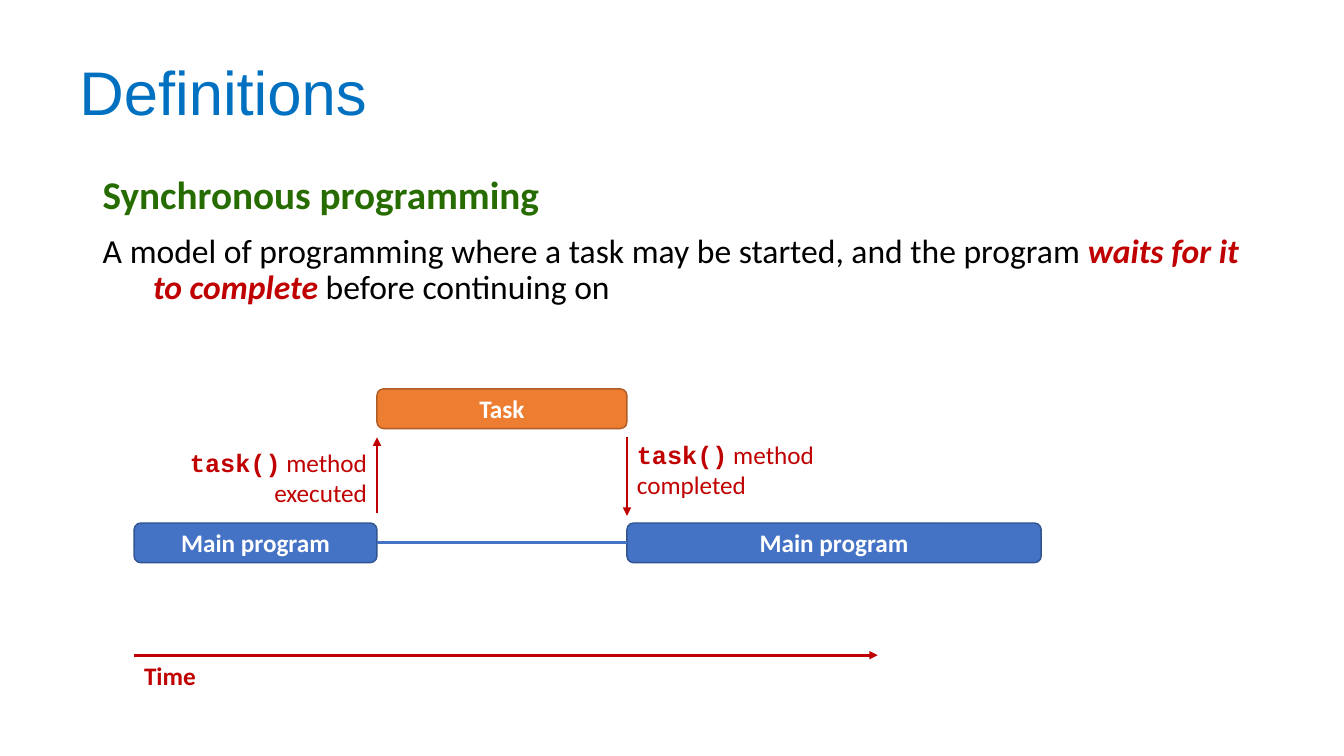
"""Builds the slide that defines synchronous programming."""
from lxml import etree
from pptx import Presentation
from pptx.dml.color import RGBColor
from pptx.enum.shapes import MSO_CONNECTOR, MSO_SHAPE
from pptx.enum.text import MSO_ANCHOR, PP_ALIGN
from pptx.oxml.ns import qn
from pptx.util import Cm, Pt

STRAIGHT = MSO_CONNECTOR.STRAIGHT
ROUNDED = MSO_SHAPE.ROUNDED_RECTANGLE
TOP, MIDDLE = MSO_ANCHOR.TOP, MSO_ANCHOR.MIDDLE
LEFT, CENTER, RIGHT = PP_ALIGN.LEFT, PP_ALIGN.CENTER, PP_ALIGN.RIGHT
RIGHT_SIDE, LEFT_SIDE = 3, 1

COLORS = {
    "title": "0070C0", "term": "266C00", "text": "000000", "accent": "C00000",
    "main": "4472C4", "main_edge": "325491",
    "task": "ED7D31", "task_edge": "AF5C24", "white": "FFFFFF",
}


class SlideBuilder:
    def __init__(self, deck):
        self.page = deck.slides.add_slide(deck.slide_layouts[6])
        self.body_font = "Calibri"
        self.code_font = "Courier New"

    def color(self, name):
        return RGBColor.from_string(COLORS[name])

    def style(self, font, size, color, bold=False, name=None):
        font.name = name or self.body_font
        font.size = Pt(size)
        font.bold = bold
        font.color.rgb = self.color(color)

    def text_box(self, left, top, width, height, anchor=TOP, wrap=True):
        box = self.page.shapes.add_textbox(Cm(left), Cm(top), Cm(width), Cm(height))
        box.text_frame.word_wrap = wrap
        box.text_frame.vertical_anchor = anchor
        return box.text_frame

    def label(self, frame, text, size, color, bold=False, name=None):
        para = frame.paragraphs[0]
        para.text = text
        self.style(para.font, size, color, bold, name)
        return para

    def definition(self, frame, term, spans):
        heading = self.label(frame, term, 28, "term", True)
        para = frame.add_paragraph()
        para.space_before = Pt(12)
        for item in (heading, para):
            item.line_spacing = 0.9
            properties = item._p.get_or_add_pPr()
            properties.set("marL", str(Cm(1.27)))
            properties.set("indent", str(-Cm(1.27)))
        self.style(para.font, 24, "text")
        for text, stressed in spans:
            span = para.add_run()
            span.text = text
            if stressed:
                span.font.bold = span.font.italic = True
                span.font.color.rgb = self.color("accent")

    def bar(self, left, top, right, text, kind):
        box = self.page.shapes.add_shape(
            ROUNDED, Cm(left), Cm(top), Cm(right - left), Cm(1))
        box.shadow.inherit = False
        box.fill.solid()
        box.fill.fore_color.rgb = self.color(kind)
        box.line.color.rgb = self.color(kind + "_edge")
        box.line.width = Pt(1)
        box.text_frame.vertical_anchor = MIDDLE
        self.label(box.text_frame, text, 18, "white", True).alignment = CENTER
        return box

    def line(self, x1, y1, x2, y2, color, arrow=True):
        line = self.page.shapes.add_connector(STRAIGHT, Cm(x1), Cm(y1), Cm(x2), Cm(y2))
        line.line.color.rgb = self.color(color)
        line.line.width = Pt(2)
        if arrow:
            etree.SubElement(line.line._get_or_add_ln(), qn("a:tailEnd"), type="triangle")
        etree.SubElement(line._element.spPr, qn("a:effectLst"))
        return line

    def method_note(self, left, top, width, lines, alignment):
        frame = self.text_box(left, top, width, 1.8)
        for number, text in enumerate(lines):
            para = frame.paragraphs[0] if number == 0 else frame.add_paragraph()
            para.alignment = alignment
            self.style(para.font, 18, "accent")
            if number == 0:
                code = para.add_run()
                code.text = "task()"
                self.style(code.font, 18, "accent", True, self.code_font)
            para.add_run().text = text


def main():
    deck = Presentation()
    deck.slide_width, deck.slide_height = Cm(33.87), Cm(19.05)
    builder = SlideBuilder(deck)

    title = builder.text_box(1.75, 1.02, 29.77, 2.77, MIDDLE)
    builder.label(title, "Definitions", 44, "title", name="Arial").line_spacing = 0.9
    builder.definition(
        builder.text_box(2.34, 4.29, 29.21, 4.52),
        "Synchronous programming",
        [("A model of programming where a task may be started, and the program ", False),
         ("waits for it to complete", True),
         (" before continuing on", False)])

    start, call, finish, end = 3.38, 9.5, 15.8, 26.24
    main_top, task_top, time_top = 13.18, 9.8, 16.51

    before = builder.bar(start, main_top, call, "Main program", "main")
    after = builder.bar(finish, main_top, end, "Main program", "main")
    builder.bar(call, task_top, finish, "Task", "task")
    waiting = builder.line(call, main_top + 0.5, finish, main_top + 0.5, "main", False)
    waiting.begin_connect(before, RIGHT_SIDE)
    waiting.end_connect(after, LEFT_SIDE)

    builder.line(call, 12.93, call, 11.02, "accent")
    builder.method_note(3.68, 11.15, call - 3.68, [" method", "executed"], RIGHT)
    builder.line(finish, 11.02, finish, 13, "accent")
    builder.method_note(finish, 10.95, 5.44, [" method completed"], LEFT)

    builder.line(start, time_top, 22.12, time_top, "accent")
    time = builder.text_box(start, time_top, 1.83, 1.02, wrap=False)
    builder.label(time, "Time", 18, "accent", True)

    deck.save("out.pptx")


if __name__ == "__main__":
    main()
